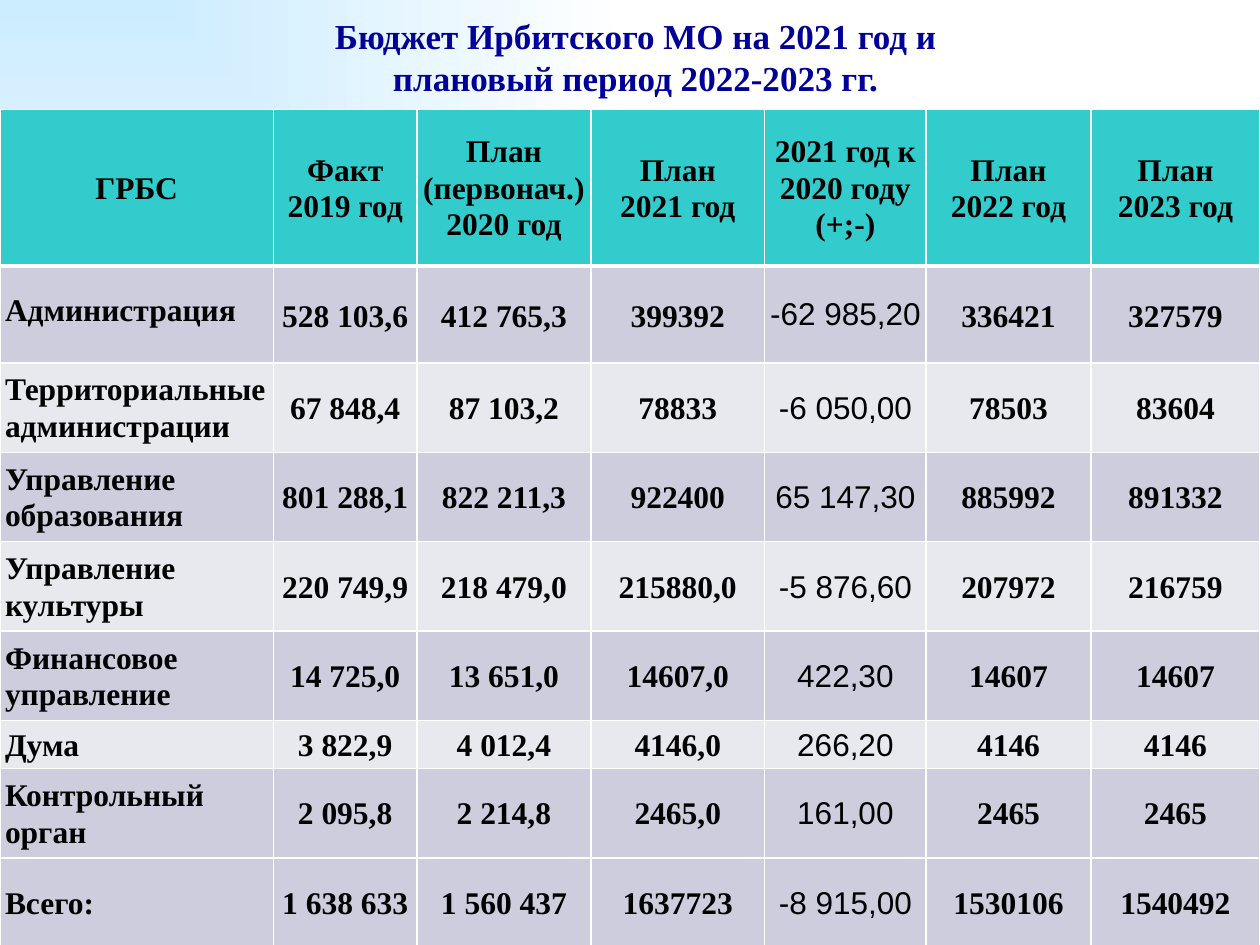
from lxml import etree
from pptx import Presentation
from pptx.dml.color import RGBColor
from pptx.enum.text import MSO_ANCHOR as Anchor, PP_ALIGN as Align
from pptx.oxml import parse_xml
from pptx.oxml.ns import nsdecls, qn
from pptx.util import Inches, Pt

COLORS = {
    "sky": "CCECFF", "white": "FFFFFF", "navy": "000099", "black": "000000",
    "header": "33CCCC", "dark": "CDCDDE", "light": "E8E8EF",
}
SERIF, SANS = "Times New Roman", "Arial"
TITLE = ["Бюджет Ирбитского МО на 2021 год и ", "плановый период 2022-2023 гг. "]
HEADER = [
    ["ГРБС"], ["Факт 2019 год"], ["План (первонач.)", "2020 год"],
    ["План", "2021 год"], ["2021 год к 2020 году", "(+;-)"],
    ["План", "2022 год"], ["План", "2023 год"],
]
BUDGET = [
    ["Администрация", "528 103,6", "412 765,3", "399392", "-62 985,20", "336421", "327579"],
    ["Территориальные администрации", "67 848,4", "87 103,2", "78833", "-6 050,00", "78503", "83604"],
    ["Управление образования", "801 288,1", "822 211,3", "922400", "65 147,30", "885992", "891332"],
    ["Управление культуры", "220 749,9", "218 479,0", "215880,0", "-5 876,60", "207972", "216759"],
    ["Финансовое управление", "14 725,0", "13 651,0", "14607,0", "422,30", "14607", "14607"],
    ["Дума", "3 822,9", "4 012,4", "4146,0", "266,20", "4146", "4146"],
    ["Контрольный орган", "2 095,8", "2 214,8", "2465,0", "161,00", "2465", "2465"],
    ["Всего:", "1 638 633", "1 560 437", "1637723", "-8 915,00", "1530106", "1540492"],
]
COLUMN_WIDTHS = [2.17, 1.14, 1.38, 1.38, 1.28, 1.31, 1.34]
ROW_HEIGHTS = [1.24, 0.77] + [0.71] * 4 + [0.38] + [0.71] * 2
CHANGE_COLUMN = 4
TOTAL_ROW = len(BUDGET)


def color(name):
    return RGBColor.from_string(COLORS[name])


def add_run(para, text, size, ink, font=SERIF, bold=True):
    span = para.add_run()
    span.text = text
    span.font.size = Pt(size)
    span.font.name = font
    span.font.bold = bold
    span.font.color.rgb = color(ink)


def paint_background(page):
    """Fill the page with a gradient spreading from the top left corner."""
    fill = page.background.fill
    fill.gradient()
    for stop, name in zip(fill.gradient_stops, ("sky", "white")):
        stop.color.rgb = color(name)
    gradient = page.element.find(".//" + qn("a:gradFill"))
    gradient.replace(gradient.find(qn("a:lin")), parse_xml(
        f'<a:path {nsdecls("a")} path="rect">'
        '<a:fillToRect r="100000" b="100000"/></a:path>'))


def place_title(page, left, top, width, height):
    box = page.shapes.title
    box.left, box.top, box.width, box.height = left, top, width, height
    box.text_frame.vertical_anchor = Anchor.MIDDLE
    para = box.text_frame.paragraphs[0]
    para.alignment = Align.CENTER
    for index, line in enumerate(TITLE):
        if index:
            para.add_line_break()
        add_run(para, line, 20, "navy")


def draw_borders(cell, top, bottom):
    """Give the cell white borders; widths are in points."""
    properties = cell._tc.get_or_add_tcPr()
    widths = {"lnL": 1, "lnR": 1, "lnT": top, "lnB": bottom}
    for index, (tag, width) in enumerate(widths.items()):
        line = etree.Element(qn(f"a:{tag}"), w=str(Pt(width)))
        solid = etree.SubElement(line, qn("a:solidFill"))
        etree.SubElement(solid, qn("a:srgbClr"), val=COLORS["white"])
        properties.insert(index, line)


def cell_fill(row):
    if row == 0:
        return "header"
    return "dark" if row % 2 or row == TOTAL_ROW else "light"


def line_spacing(row, column):
    if row and column == CHANGE_COLUMN:
        return 1.0
    if row == 1:
        return 1.15 if column else Pt(16.1)
    return 1.05


def fill_cell(cell, lines, row, column):
    is_change = row > 0 and column == CHANGE_COLUMN
    side, above, below = (0.01, 0.01, 0) if is_change else (0.04, 0.02, 0.02)
    cell.margin_left = cell.margin_right = Inches(side)
    cell.margin_top, cell.margin_bottom = Inches(above), Inches(below)
    cell.vertical_anchor = Anchor.MIDDLE
    cell.fill.solid()
    cell.fill.fore_color.rgb = color(cell_fill(row))
    draw_borders(cell, top=2.25 if row == 1 else 1, bottom=2.25 if row == 0 else 1)

    frame = cell.text_frame
    for index, line in enumerate(lines):
        para = frame.add_paragraph() if index else frame.paragraphs[0]
        para.alignment = Align.LEFT if row and column == 0 else Align.CENTER
        para.line_spacing = line_spacing(row, column)
        add_run(para, line, 18, "black", SANS if is_change else SERIF, not is_change)


def place_budget_table(page, left, top, width, height):
    rows = [HEADER] + [[[text] for text in record] for record in BUDGET]
    table = page.shapes.add_table(
        len(rows), len(HEADER), left, top, width, height).table
    for column, size in zip(table.columns, COLUMN_WIDTHS):
        column.width = Inches(size)
    for row, size in zip(table.rows, ROW_HEIGHTS):
        row.height = Inches(size)
    for r, record in enumerate(rows):
        for c, lines in enumerate(record):
            fill_cell(table.cell(r, c), lines, r, c)


def main():
    deck = Presentation()
    deck.slide_width, deck.slide_height = Inches(10), Inches(7.5)
    page = deck.slides.add_slide(deck.slide_layouts.get_by_name("Title Only"))
    paint_background(page)
    place_title(page, Inches(0.58), Inches(0.09), Inches(9), Inches(0.71))
    place_budget_table(page, Inches(0), Inches(0.87), Inches(10), Inches(6.63))
    deck.save("out.pptx")


if __name__ == "__main__":
    main()
